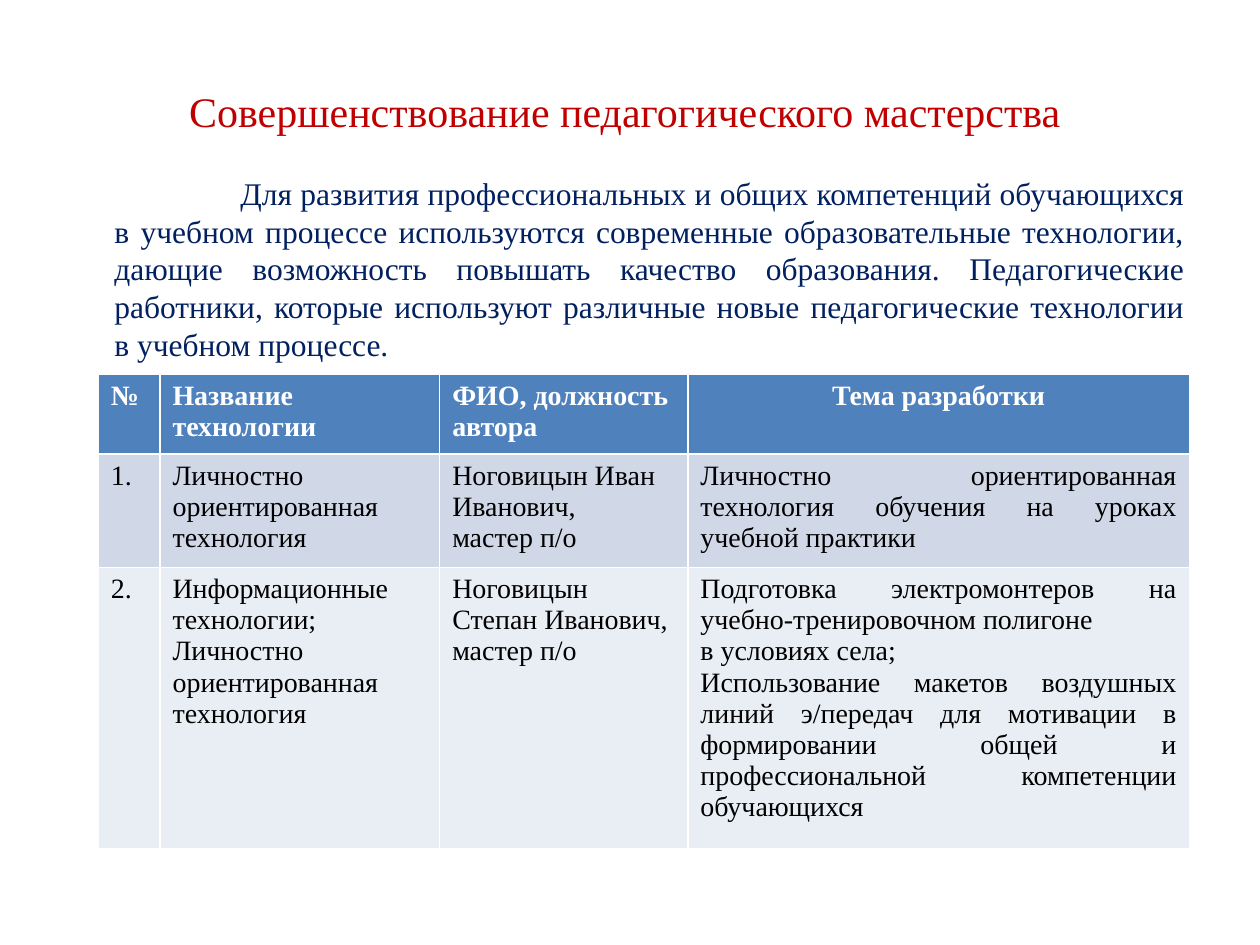
from pptx import Presentation
from pptx.dml.color import RGBColor
from pptx.enum.text import MSO_ANCHOR, PP_ALIGN
from pptx.util import Inches, Pt

LEFT, CENTER, JUSTIFY = PP_ALIGN.LEFT, PP_ALIGN.CENTER, PP_ALIGN.JUSTIFY
MIDDLE = MSO_ANCHOR.MIDDLE


def add_run(p, text, size, color, bold=False):
    r = p.add_run()
    r.text = text
    r.font.name = "Times New Roman"
    r.font.size = Pt(size)
    r.font.bold = bold
    r.font.color.rgb = RGBColor.from_string(color)


prs = Presentation()
prs.slide_width, prs.slide_height = Inches(10), Inches(7.5)
s = prs.slides.add_slide(prs.slide_layouts[5])

# Title, moved up and left of the middle of its box by the insets
title = s.shapes.title
title.left, title.top = Inches(0.5), Inches(0.44)
title.width, title.height = Inches(9), Inches(1.25)
tf = title.text_frame
tf.vertical_anchor = MIDDLE
tf.margin_bottom = Inches(0.43)
tf.margin_right = Inches(0.18)
p = tf.paragraphs[0]
p.alignment = CENTER
add_run(p, "Совершенствование педагогического мастерства", 24, "C00000")

# Introduction
intro = s.shapes.add_textbox(Inches(0.43), Inches(1.33), Inches(9.07), Inches(5.37))
tf = intro.text_frame
tf.word_wrap = True
p = tf.paragraphs[0]
p.alignment = JUSTIFY
pPr = p._p.get_or_add_pPr()
pPr.set("marL", str(Inches(0.38)))
pPr.set("indent", str(Inches(1)))
add_run(p, "Для развития профессиональных и общих компетенций обучающихся "
        "в учебном процессе используются современные образовательные технологии, "
        "дающие возможность повышать качество образования. Педагогические "
        "работники, которые используют различные новые педагогические технологии "
        "в учебном процессе.", 18, "002060")

# Table: each cell is a list of (text, alignment) paragraphs
rows = [
    [[("№", LEFT)],
     [("Название технологии", LEFT)],
     [("ФИО, должность автора", LEFT)],
     [("Тема разработки", CENTER)]],
    [[("1.", LEFT)],
     [("Личностно ориентированная технология", LEFT)],
     [("Ноговицын Иван Иванович,", LEFT), ("мастер п/о", LEFT)],
     [("Личностно ориентированная технология обучения на уроках учебной практики",
       JUSTIFY)]],
    [[("2.", LEFT)],
     [("Информационные технологии;", LEFT),
      ("Личностно ориентированная технология", JUSTIFY)],
     [("Ноговицын Степан Иванович,", LEFT), ("мастер п/о", LEFT)],
     [("Подготовка электромонтеров на учебно-тренировочном полигоне", JUSTIFY),
      ("в условиях села;", LEFT),
      ("Использование макетов воздушных линий э/передач для мотивации в формировании "
       "общей и профессиональной компетенции обучающихся", JUSTIFY)]],
]
col_widths = [0.49, 2.22, 1.97, 3.98]
row_heights = [0.63, 0.25, 0.25]  # the data rows grow to fit their text
row_fills = ["4F81BD", "D0D8E8", "E9EDF4"]

frame = s.shapes.add_table(len(rows), len(col_widths), Inches(0.78), Inches(2.97),
                           Inches(8.67), Inches(3.77))
table = frame.table
for column, width in zip(table.columns, col_widths):
    column.width = Inches(width)
for i, (row, height, fill) in enumerate(zip(rows, row_heights, row_fills)):
    table.rows[i].height = Inches(height)
    header = i == 0
    for j, paragraphs in enumerate(row):
        cell = table.cell(i, j)
        cell.fill.solid()
        cell.fill.fore_color.rgb = RGBColor.from_string(fill)
        tf = cell.text_frame
        for k, (text, alignment) in enumerate(paragraphs):
            p = tf.add_paragraph() if k else tf.paragraphs[0]
            p.alignment = alignment
            add_run(p, text, 16, "FFFFFF" if header else "000000", header)
frame.width, frame.height = Inches(8.67), Inches(3.77)

prs.save("out.pptx")
